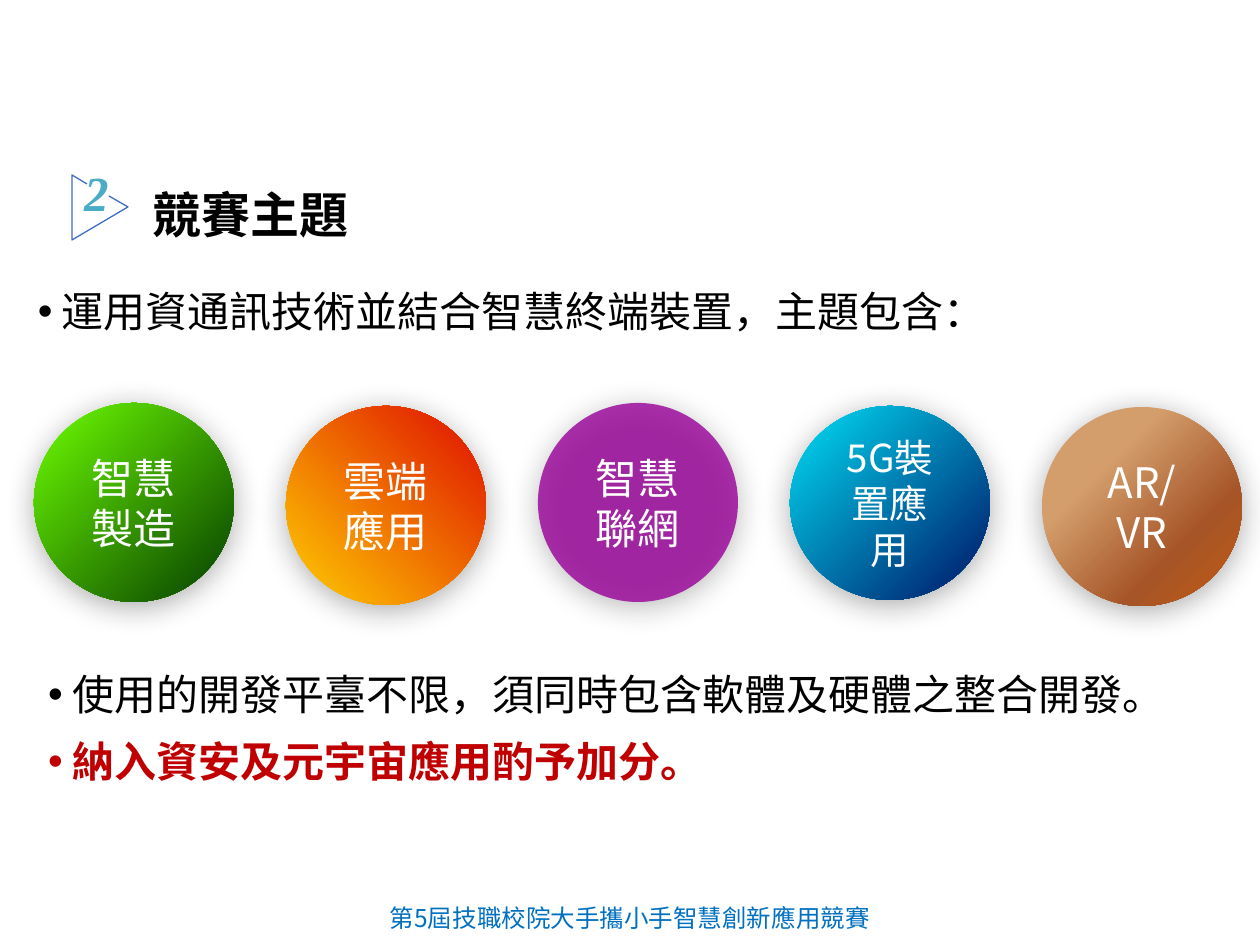
from lxml.etree import SubElement
from pptx import Presentation
from pptx.dml.color import RGBColor
from pptx.enum.shapes import MSO_SHAPE as SHAPE
from pptx.enum.text import MSO_ANCHOR as ANCHOR, PP_ALIGN as ALIGN
from pptx.oxml.ns import qn
from pptx.util import Emu, Pt

TC, SC = "Noto Sans CJK TC", "Noto Sans CJK SC"
FOOTER = "第5屆技職校院大手攜小手智慧創新應用競賽"
NUMBER, TITLE = "2", "競賽主題"
INTRO = [("運用資通訊技術並結合智慧終端裝置，主題包含：", "000000", False)]
RULES = [
    ("使用的開發平臺不限，須同時包含軟體及硬體之整合開發。", "000000", False),
    ("納入資安及元宇宙應用酌予加分。", "C00000", True),
]
TOPICS = [
    ("智慧製造", 24, 403, 199, 45, [(0, "6EFF01"), (90, "0F5000"), (100, "0F5000")]),
    ("雲端應用", 24, 406, 199, 315, [(0, "FFCF01"), (90, "E22000"), (100, "E22000")]),
    ("智慧聯網", 24, 403, 199, 0, [(0, "990099")]),
    ("5G裝置應用", 22, 406, 194, 45, [(0, "00DFF6"), (90, "002774"), (100, "002774")]),
    ("AR/\nVR", 24, 407, 199, 45,
     [(0, "D49E6C"), (30, "D49E6C"), (70, "A65528"), (100, "C55A11")]),
]
MARKER = [(87, 184), (72, 175), (72, 240), (128, 207), (109, 196)]
TOPIC_LEFT, TOPIC_STEP, TOPIC_WIDTH, LABEL_WIDTH = 34, 252, 200, 126


def px(value):
    return Emu(round(value * 914400 / 126))


def rgb(value):
    return RGBColor.from_string(value)


def add_bullet(paragraph, color):
    props = paragraph._p.get_or_add_pPr()
    props.set("marL", str(px(24)))
    props.set("indent", str(-px(24)))
    SubElement(SubElement(props, qn("a:buClr")), qn("a:srgbClr"), val=color)
    SubElement(props, qn("a:buFont"), typeface="Arial")
    SubElement(props, qn("a:buChar"), char="•")


def add_text(text, left, top, width, height, size=24, font=TC, east=TC, color="000000",
             bold=False, italic=False, align=ALIGN.LEFT, anchor=ANCHOR.TOP,
             inset=6, spacing=None, bullet=False):
    box = slide.shapes.add_textbox(px(left), px(top), px(width), px(height))
    frame = box.text_frame
    frame.word_wrap = True
    frame.vertical_anchor = anchor
    frame.margin_left = frame.margin_right = px(inset)
    frame.margin_top = frame.margin_bottom = px(inset)
    lines = [(line, color, bold) for line in text.split("\n")] if isinstance(text, str) else text
    for index, (line, line_color, line_bold) in enumerate(lines):
        paragraph = frame.add_paragraph() if index else frame.paragraphs[0]
        paragraph.alignment = align
        if spacing:
            paragraph.line_spacing = spacing
        if bullet:
            add_bullet(paragraph, line_color)
        run = paragraph.add_run()
        run.text = line
        run.font.size, run.font.name = Pt(size), font
        run.font.bold, run.font.italic = line_bold, italic
        run.font.color.rgb = rgb(line_color)
        SubElement(run.font._element, qn("a:ea"), typeface=east)


def add_color(parent, color, alpha=None):
    node = SubElement(parent, qn("a:srgbClr"), val=color)
    if alpha:
        SubElement(node, qn("a:alpha"), val=str(alpha * 1000))


def fill_circle(circle, stops, angle):
    properties = circle._element.spPr
    if len(stops) == 1:
        circle.fill.solid()
        circle.fill.fore_color.rgb = rgb(stops[0][1])
        SubElement(properties.find(".//" + qn("a:srgbClr")), qn("a:alpha"), val="80000")
        return
    circle.fill.gradient()
    circle.fill.gradient_angle = 360 - angle
    stop_list = properties.find(".//" + qn("a:gsLst"))
    for old_stop in list(stop_list):
        stop_list.remove(old_stop)
    for position, color in stops:
        add_color(SubElement(stop_list, qn("a:gs"), pos=str(position * 1000)), color)


def add_topic(left, label, size, top, height, angle, stops):
    circle = slide.shapes.add_shape(SHAPE.OVAL, px(left), px(top), px(TOPIC_WIDTH), px(height))
    fill_circle(circle, stops, angle)
    circle.line.fill.background()
    circle.shadow.inherit = False
    effects = circle._element.spPr.find(qn("a:effectLst"))
    shadow = SubElement(effects, qn("a:outerShdw"), blurRad=str(Pt(18)), dist=str(Pt(3)),
                        dir=str(87 * 60000), algn="ctr", rotWithShape="0")
    add_color(shadow, "000000", 33)
    add_text(label, left + (TOPIC_WIDTH - LABEL_WIDTH) / 2, top, LABEL_WIDTH, height,
             size=size, font=SC, east=SC, color="FFFFFF", align=ALIGN.CENTER,
             anchor=ANCHOR.MIDDLE)


prs = Presentation()
prs.slide_width, prs.slide_height = px(1260), px(945)
slide = prs.slides.add_slide(prs.slide_layouts[6])

add_text(FOOTER, 0, 897, 1260, 48, size=14, color="0070C0", align=ALIGN.CENTER)

builder = slide.shapes.build_freeform(*MARKER[0], scale=px(1))
builder.add_line_segments(MARKER[1:], close=False)
marker = builder.convert_to_shape()
marker.fill.background()
marker.line.color.rgb = rgb("3E6EC2")
marker.line.width = Pt(0.75)
marker.shadow.inherit = False

add_text(NUMBER, 72, 165, 49, 54, size=28, font="Times New Roman", color="4BACC6", bold=True,
         italic=True, align=ALIGN.CENTER, anchor=ANCHOR.MIDDLE, inset=0)
add_text(TITLE, 153, 173, 1121, 71, size=28, bold=True, anchor=ANCHOR.MIDDLE,
         inset=0, spacing=1.2)
add_text(INTRO, 32, 263, 1106, 71, font="Arial", spacing=1.33, bullet=True)

for index, topic in enumerate(TOPICS):
    add_topic(TOPIC_LEFT + index * TOPIC_STEP, *topic)

add_text(RULES, 42, 646, 1192, 147, font="Arial", spacing=1.33, bullet=True)

prs.save("out.pptx")
